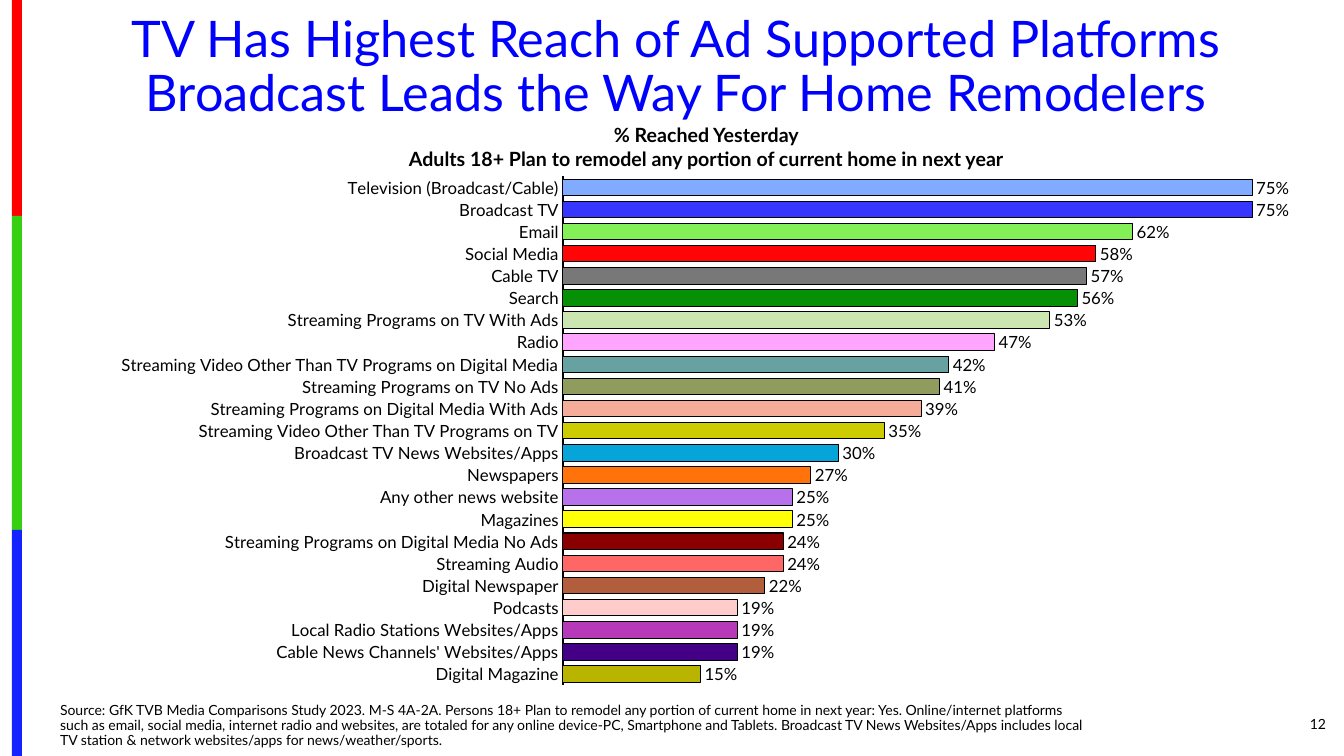
from pptx import Presentation
from pptx.chart.data import CategoryChartData
from pptx.dml.color import RGBColor
from pptx.enum.chart import XL_CHART_TYPE as ChartType, XL_LABEL_POSITION as LabelPos, XL_TICK_MARK as TickMark
from pptx.enum.shapes import MSO_SHAPE as Shape
from pptx.enum.text import MSO_ANCHOR as Anchor, MSO_AUTO_SIZE as AutoSize, PP_ALIGN as Align
from pptx.oxml import parse_xml
from pptx.oxml.ns import nsdecls
from pptx.util import Pt

TITLE = "TV Has Highest Reach of Ad Supported Platforms Broadcast Leads the Way For Home Remodelers"
SUBTITLE = ["% Reached Yesterday",
            "Adults 18+ Plan to remodel any portion of current home in next year"]
SOURCE = ("Source: GfK TVB Media Comparisons Study 2023. M-S 4A-2A. Persons 18+ Plan to remodel any "
          "portion of current home in next year: Yes. Online/internet platforms such as email, social "
          "media, internet radio and websites, are totaled for any online device-PC, Smartphone and "
          "Tablets. Broadcast TV News Websites/Apps includes local TV station & network websites/apps "
          "for news/weather/sports.")
PAGE = "12"

REACH = [
    ("Television (Broadcast/Cable)", 0.75, "80ABFF"),
    ("Broadcast TV", 0.75, "3636FF"),
    ("Email", 0.62, "84F058"),
    ("Social Media", 0.58, "FF0505"),
    ("Cable TV", 0.57, "787878"),
    ("Search", 0.56, "059005"),
    ("Streaming Programs on TV With Ads", 0.53, "CCE6B2"),
    ("Radio", 0.47, "FFA4FF"),
    ("Streaming Video Other Than TV Programs on Digital Media", 0.42, "67A1A1"),
    ("Streaming Programs on TV No Ads", 0.41, "909C5E"),
    ("Streaming Programs on Digital Media With Ads", 0.39, "F5AD99"),
    ("Streaming Video Other Than TV Programs on TV", 0.35, "CCCC00"),
    ("Broadcast TV News Websites/Apps", 0.30, "05A4D9"),
    ("Newspapers", 0.27, "FF730A"),
    ("Any other news website", 0.25, "B671EB"),
    ("Magazines", 0.25, "FFFF05"),
    ("Streaming Programs on Digital Media No Ads", 0.24, "8A0000"),
    ("Streaming Audio", 0.24, "FF6666"),
    ("Digital Newspaper", 0.22, "B25E3C"),
    ("Podcasts", 0.19, "FFCCCC"),
    ("Local Radio Stations Websites/Apps", 0.19, "B539B8"),
    ("Cable News Channels' Websites/Apps", 0.19, "430086"),
    ("Digital Magazine", 0.15, "B8B400"),
]
STRIPES = [("FE0000", 216), ("36CF12", 314), ("1322FE", 226)]  # colour, height
STRIPE_LEFT, STRIPE_WIDTH = 12, 10
PLOT = {"x": 0.413, "y": 0.047, "w": 0.565, "h": 0.946}

FONT = "Lato"
EMU_PER_PX = 914400 / 100.8


def px(*lengths):
    return [round(length * EMU_PER_PX) for length in lengths]


def color(hex_string):
    return RGBColor.from_string(hex_string)


def set_font(font, size, hex_string="000000", bold=False):
    for name, value in {"name": FONT, "size": Pt(size), "bold": bold}.items():
        setattr(font, name, value)
    font.color.rgb = color(hex_string)


def place(shape, *box):
    for name, value in zip(("left", "top", "width", "height"), px(*box)):
        setattr(shape, name, value)


def write(shape, lines, size, align, anchor, spacing=1.0, **font_values):
    frame = shape.text_frame
    for name, value in {"word_wrap": True, "auto_size": AutoSize.NONE, "vertical_anchor": anchor}.items():
        setattr(frame, name, value)
    frame.text = "\n".join(lines)
    for paragraph in frame.paragraphs:
        for name, value in {"alignment": align, "line_spacing": spacing, "space_before": Pt(0)}.items():
            setattr(paragraph, name, value)
        set_font(paragraph.runs[0].font, size, **font_values)


def remove_bullet(paragraph):
    properties = paragraph._p.get_or_add_pPr()
    properties.set("marL", "0")
    properties.set("indent", "0")
    properties.append(parse_xml(f"<a:buNone {nsdecls('a')}/>"))


def add_stripes(slide):
    top = 0
    for fill, height in STRIPES:
        stripe = slide.shapes.add_shape(Shape.RECTANGLE, *px(STRIPE_LEFT, top, STRIPE_WIDTH, height))
        stripe.shadow.inherit = False
        stripe.fill.solid()
        stripe.fill.fore_color.rgb = color(fill)
        stripe.line.fill.background()
        top += height


def fix_plot_area(chart):
    """Pin the inner plot area and leave the chart background clear."""
    space = chart._chartSpace
    sizes = "".join(f'<c:{name} val="{value}"/>' for name, value in PLOT.items())
    layout = parse_xml(
        f'<c:layout {nsdecls("c")}><c:manualLayout><c:layoutTarget val="inner"/>'
        f'<c:xMode val="edge"/><c:yMode val="edge"/>{sizes}</c:manualLayout></c:layout>')
    plot_area = space.chart.plotArea
    for old_layout in plot_area.findall(layout.tag):
        plot_area.remove(old_layout)
    plot_area.insert(0, layout)
    space.chart.addnext(parse_xml(
        f'<c:spPr {nsdecls("c", "a")}><a:noFill/><a:ln><a:noFill/></a:ln></c:spPr>'))


def add_reach_chart(slide):
    platforms, shares, fills = zip(*REACH)
    data = CategoryChartData(number_format="0%")
    data.categories = platforms
    data.add_series("Series 1", shares)
    chart = slide.shapes.add_chart(ChartType.BAR_CLUSTERED, *px(25, 151, 1302, 538), data).chart
    chart.has_legend = chart.has_title = False
    fix_plot_area(chart)
    set_font(chart.font, 10)

    platform_axis, share_axis = chart.category_axis, chart.value_axis
    for name, value in {"reverse_order": True, "major_tick_mark": TickMark.NONE,
                        "minor_tick_mark": TickMark.NONE, "has_major_gridlines": False}.items():
        setattr(platform_axis, name, value)
    set_font(platform_axis.tick_labels.font, 12)
    platform_axis.format.line.color.rgb = color("000000")
    platform_axis.format.line.width = Pt(1.5)
    for name, value in {"visible": False, "has_major_gridlines": False,
                        "minimum_scale": 0, "maximum_scale": 0.8}.items():
        setattr(share_axis, name, value)
    share_axis.tick_labels.number_format = "0.0%"
    share_axis.tick_labels.number_format_is_linked = False

    bars = chart.plots[0]
    bars.gap_width = 34
    bars.vary_by_categories = False
    bars.has_data_labels = True
    for name, value in {"show_value": True, "number_format": "0%", "number_format_is_linked": False,
                        "position": LabelPos.OUTSIDE_END}.items():
        setattr(bars.data_labels, name, value)
    set_font(bars.data_labels.font, 12)

    reach = bars.series[0]
    reach.invert_if_negative = False
    for part, fill in [(reach, "CCCCCC")] + [(reach.points[i], f) for i, f in enumerate(fills)]:
        part.format.fill.solid()
        part.format.fill.fore_color.rgb = color(fill)
        part.format.line.color.rgb = color("000000")
        part.format.line.width = Pt(0.75)


def main():
    deck = Presentation()
    deck.slide_width, deck.slide_height = px(1344, 756)
    slide = deck.slides.add_slide(deck.slide_layouts[1])
    title, source = slide.placeholders

    add_stripes(slide)
    place(title, 50, 8, 1252, 120)
    write(title, [TITLE], 36, Align.CENTER, Anchor.MIDDLE, 0.9, hex_string="0000FF")

    page = slide.shapes.add_textbox(*px(1227, 704, 109, 40))
    write(page, [PAGE], 10, Align.RIGHT, Anchor.MIDDLE)

    place(source, 50, 698, 1050, 56)
    write(source, [SOURCE], 10, Align.LEFT, Anchor.BOTTOM, 0.9)
    remove_bullet(source.text_frame.paragraphs[0])

    subtitle = slide.shapes.add_textbox(*px(345, 118, 723, 57))
    write(subtitle, SUBTITLE, 14, Align.CENTER, Anchor.TOP, bold=True)
    add_reach_chart(slide)
    deck.save("out.pptx")


if __name__ == "__main__":
    main()
